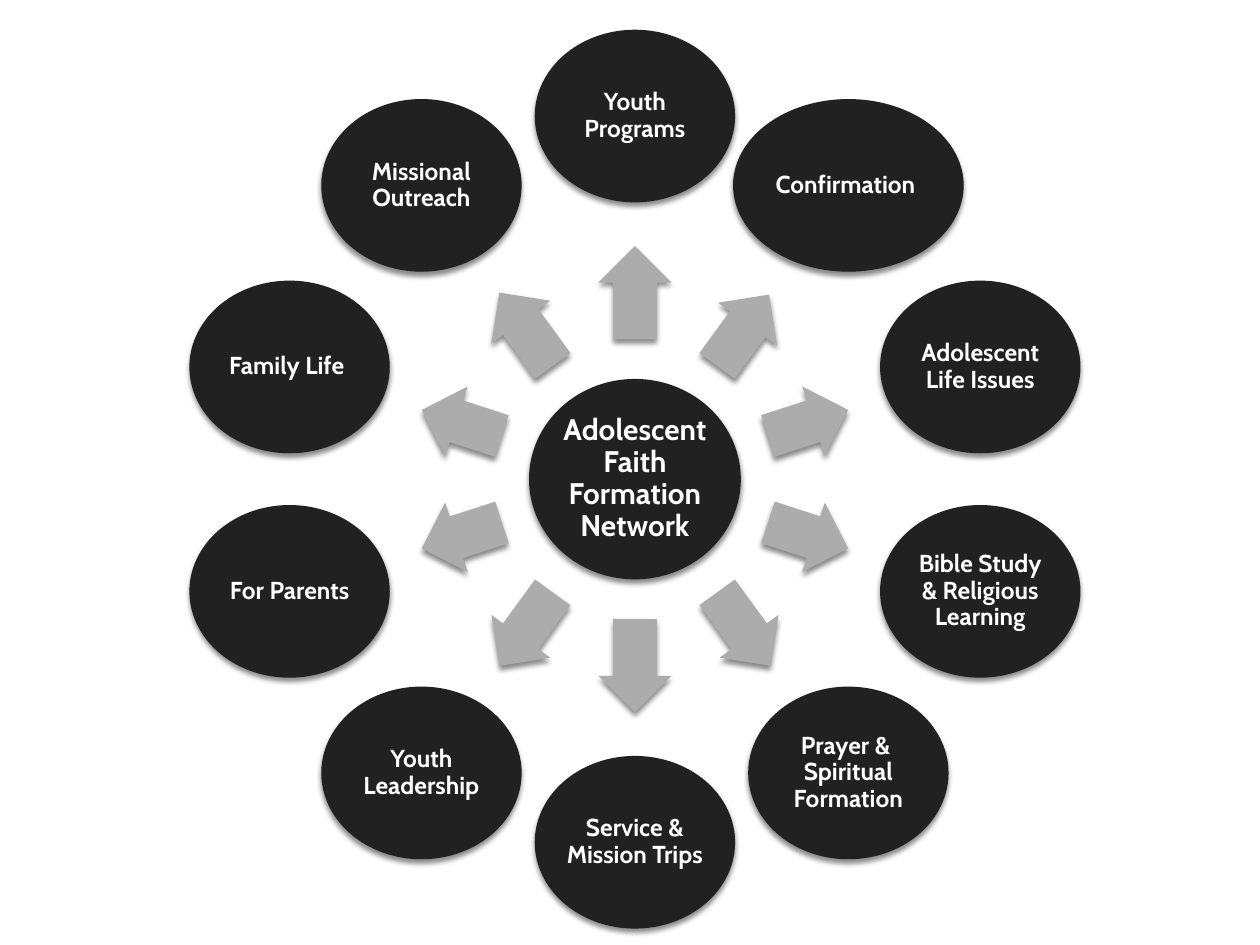
from dataclasses import dataclass
from math import cos, radians, sin

from lxml.etree import fromstring
from pptx import Presentation
from pptx.dml.color import RGBColor
from pptx.enum.shapes import MSO_SHAPE
from pptx.enum.text import MSO_ANCHOR, PP_ALIGN
from pptx.oxml.ns import qn
from pptx.shapes.autoshape import Shape
from pptx.slide import Slide
from pptx.util import Cm, Pt

FONT = "Cabin"
DARK, GREY, WHITE = "212121", "ACACAC", "FFFFFF"
CENTER_X, CENTER_Y = 12.8, 9.66
TOPIC_RADIUS = 7.32
ARROW_START = 2.82
ARROW_HEIGHT = 1.47
INSET = 0.05
SHADOW = (
    '<a:outerShdw xmlns:a="http://schemas.openxmlformats.org/drawingml/2006/main"'
    ' blurRad="38100" dist="30000" dir="5400000" rotWithShape="0">'
    '<a:srgbClr val="000000"><a:alpha val="45000"/></a:srgbClr></a:outerShdw>'
)


@dataclass
class Topic:
    label: str
    arrow_length: float
    width: float = 4.04
    height: float = 3.48


# Clockwise from the top
TOPICS = [
    Topic("Youth Programs", 1.88),
    Topic("Confirmation ", 1.78, width=4.65),
    Topic("Adolescent Life Issues", 1.7),
    Topic("Bible Study & Religious Learning", 1.7),
    Topic("Prayer & \vSpiritual Formation", 1.83),
    Topic("Service & Mission Trips", 1.88),
    Topic("Youth Leadership", 1.83),
    Topic("For Parents", 1.7),
    Topic("Family Life ", 1.7),
    Topic("Missional Outreach", 1.83),
]


def color(value: str) -> RGBColor:
    return RGBColor.from_string(value)


def add_centered(page: Slide, kind: MSO_SHAPE, angle: float, radius: float,
                 width: float, height: float, fill: str) -> Shape:
    """Add a shadowed shape whose middle lies at an angle and radius from the hub."""
    x = CENTER_X + radius * cos(radians(angle))
    y = CENTER_Y + radius * sin(radians(angle))
    shape = page.shapes.add_shape(
        kind, Cm(x - width / 2), Cm(y - height / 2), Cm(width), Cm(height))
    shape.fill.solid()
    shape.fill.fore_color.rgb = color(fill)
    shape.line.fill.background()
    shape.shadow.inherit = False
    shape._element.spPr.find(qn("a:effectLst")).append(fromstring(SHADOW))
    return shape


def add_label(shape: Shape, label: str, size: float) -> None:
    frame = shape.text_frame
    frame.word_wrap = True
    frame.vertical_anchor = MSO_ANCHOR.MIDDLE
    frame.margin_left = frame.margin_right = Cm(INSET)
    frame.margin_top = frame.margin_bottom = Cm(INSET)
    para = frame.paragraphs[0]
    para.text = label
    para.alignment = PP_ALIGN.CENTER
    para.line_spacing = 0.9
    para.font.name = FONT
    para.font.size = Pt(size)
    para.font.bold = True
    para.font.color.rgb = color(WHITE)


def add_spoke(page: Slide, topic: Topic, angle: float) -> None:
    """Add the arrow and the topic that it points to."""
    arrow = add_centered(page, MSO_SHAPE.RIGHT_ARROW, angle,
                         ARROW_START + topic.arrow_length / 2,
                         topic.arrow_length, ARROW_HEIGHT, GREY)
    arrow.adjustments[0] = 0.6
    arrow.adjustments[1] = 0.5
    arrow.rotation = angle % 360
    bubble = add_centered(page, MSO_SHAPE.OVAL, angle, TOPIC_RADIUS,
                          topic.width, topic.height, DARK)
    add_label(bubble, topic.label, 14)


def main() -> None:
    deck = Presentation()
    deck.slide_width, deck.slide_height = Cm(25.4), Cm(19.05)
    page = deck.slides.add_slide(deck.slide_layouts[6])
    hub = add_centered(page, MSO_SHAPE.OVAL, 0, 0, 4.27, 4.04, DARK)
    add_label(hub, "Adolescent Faith Formation Network", 17)
    step = 360 / len(TOPICS)
    for index, topic in enumerate(TOPICS):
        add_spoke(page, topic, index * step - 90)
    deck.save("out.pptx")


if __name__ == "__main__":
    main()
